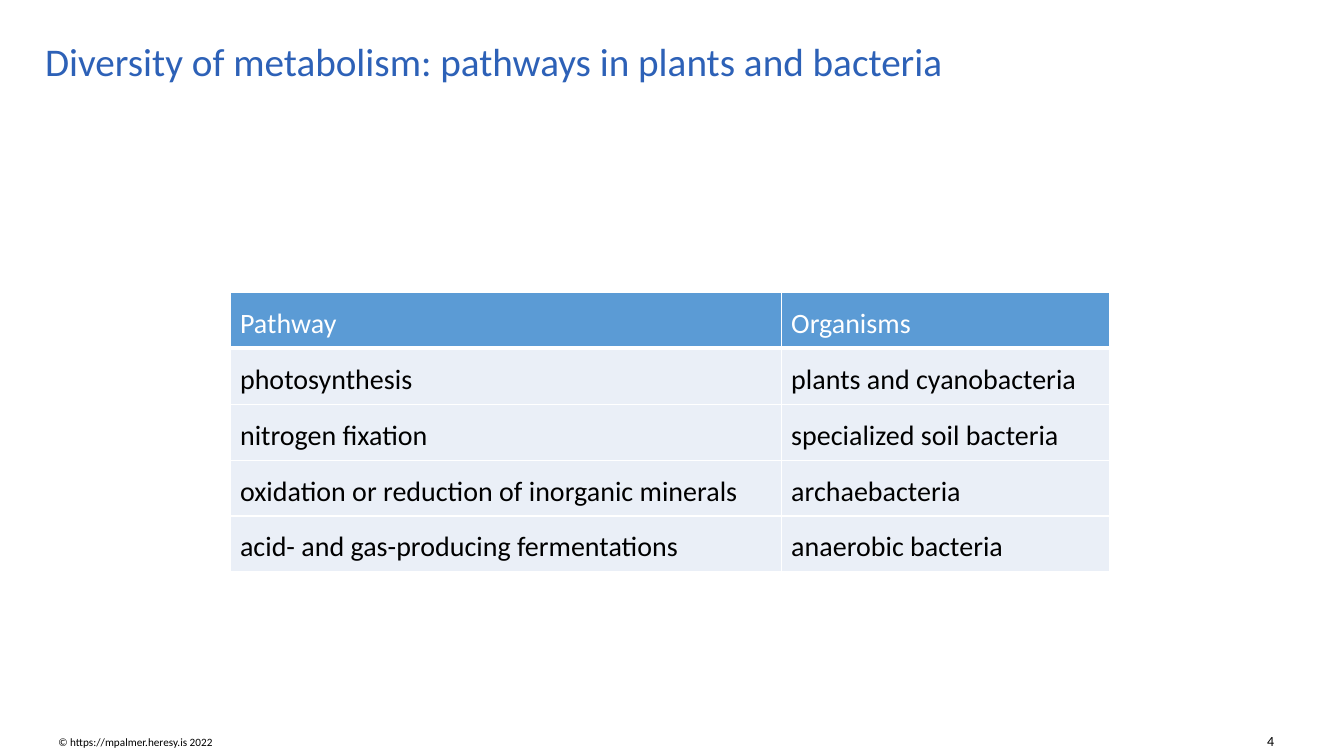
from lxml import etree
from pptx import Presentation
from pptx.dml.color import RGBColor
from pptx.enum.text import MSO_ANCHOR, MSO_AUTO_SIZE, PP_ALIGN
from pptx.oxml.ns import qn
from pptx.util import Cm, Pt

LEFT, RIGHT = PP_ALIGN.LEFT, PP_ALIGN.RIGHT
MIDDLE, BOTTOM = MSO_ANCHOR.MIDDLE, MSO_ANCHOR.BOTTOM
FIT_NONE, FIT_SHAPE = MSO_AUTO_SIZE.NONE, MSO_AUTO_SIZE.SHAPE_TO_FIT_TEXT

FONT = "Calibri"
BLACK, WHITE = "000000", "FFFFFF"
TITLE_BLUE, HEADER_BLUE, PALE_BLUE = "2D61B7", "5B9BD5", "EAEFF7"

PATHWAYS = [
    ("Pathway", "Organisms"),
    ("photosynthesis", "plants and cyanobacteria"),
    ("nitrogen fixation", "specialized soil bacteria"),
    ("oxidation or reduction of inorganic minerals", "archaebacteria"),
    ("acid- and gas-producing fermentations", "anaerobic bacteria"),
]
COLUMN_WIDTHS = (Cm(13.89), Cm(8.28))
ROW_HEIGHT = Cm(1.27)


def color(hex_value):
    return RGBColor.from_string(hex_value)


def write_text(text_frame, text, *, size, hex_color=BLACK, align=LEFT, line_spacing=None):
    paragraph = text_frame.paragraphs[0]
    paragraph.alignment = align
    if line_spacing:
        paragraph.line_spacing = line_spacing
    run = paragraph.add_run()
    run.text = text
    run.font.name = FONT
    run.font.size = Pt(size)
    run.font.bold = False
    run.font.color.rgb = color(hex_color)


def add_text_box(slide, box, text, *, anchor, auto_size=FIT_NONE, **text_format):
    text_frame = slide.shapes.add_textbox(*box).text_frame
    text_frame.word_wrap = True
    text_frame.auto_size = auto_size
    text_frame.vertical_anchor = anchor
    write_text(text_frame, text, **text_format)


def set_borders(cell, top, bottom):
    """Draw white cell borders; top and bottom widths are in points."""
    properties = cell._tc.get_or_add_tcPr()
    for side, width in (("L", 1), ("R", 1), ("T", top), ("B", bottom)):
        line = etree.SubElement(properties, qn(f"a:ln{side}"), w=str(Pt(width)))
        fill = etree.SubElement(line, qn("a:solidFill"))
        etree.SubElement(fill, qn("a:srgbClr"), val=WHITE)


def format_cell(cell, text, row_index):
    is_header = row_index == 0
    cell.margin_left = cell.margin_right = Cm(0.25)
    cell.margin_top, cell.margin_bottom = Cm(0.36), Cm(0.2)
    set_borders(cell, top=3 if row_index == 1 else 1, bottom=3 if is_header else 1)
    cell.fill.solid()
    cell.fill.fore_color.rgb = color(HEADER_BLUE if is_header else PALE_BLUE)
    write_text(cell.text_frame, text, size=20, hex_color=WHITE if is_header else BLACK)


def add_pathway_table(slide, left, top):
    table = slide.shapes.add_table(
        len(PATHWAYS), len(COLUMN_WIDTHS), left, top,
        sum(COLUMN_WIDTHS), ROW_HEIGHT * len(PATHWAYS),
    ).table
    table.horz_banding = False
    for column, width in zip(table.columns, COLUMN_WIDTHS):
        column.width = width
    for row_index, texts in enumerate(PATHWAYS):
        for column_index, text in enumerate(texts):
            format_cell(table.cell(row_index, column_index), text, row_index)


def main():
    presentation = Presentation()
    presentation.slide_width, presentation.slide_height = Cm(33.87), Cm(19.05)
    slide = presentation.slides.add_slide(presentation.slide_layouts[6])

    add_text_box(slide, (Cm(1.22), Cm(18.42), Cm(7.98), Cm(0.58)),
                 "© https://mpalmer.heresy.is 2022",
                 anchor=BOTTOM, auto_size=FIT_SHAPE, size=8)
    add_text_box(slide, (Cm(30.58), Cm(18.31), Cm(1.78), Cm(0.69)), "4",
                 anchor=BOTTOM, auto_size=FIT_SHAPE, size=10, align=RIGHT)
    add_text_box(slide, (Cm(0.89), Cm(0.61), Cm(32.26), Cm(1.98)),
                 "Diversity of metabolism: pathways in plants and bacteria",
                 anchor=MIDDLE, size=28, hex_color=TITLE_BLUE, line_spacing=0.9)
    add_pathway_table(slide, Cm(5.8), Cm(7.37))

    presentation.save("out.pptx")


if __name__ == "__main__":
    main()
